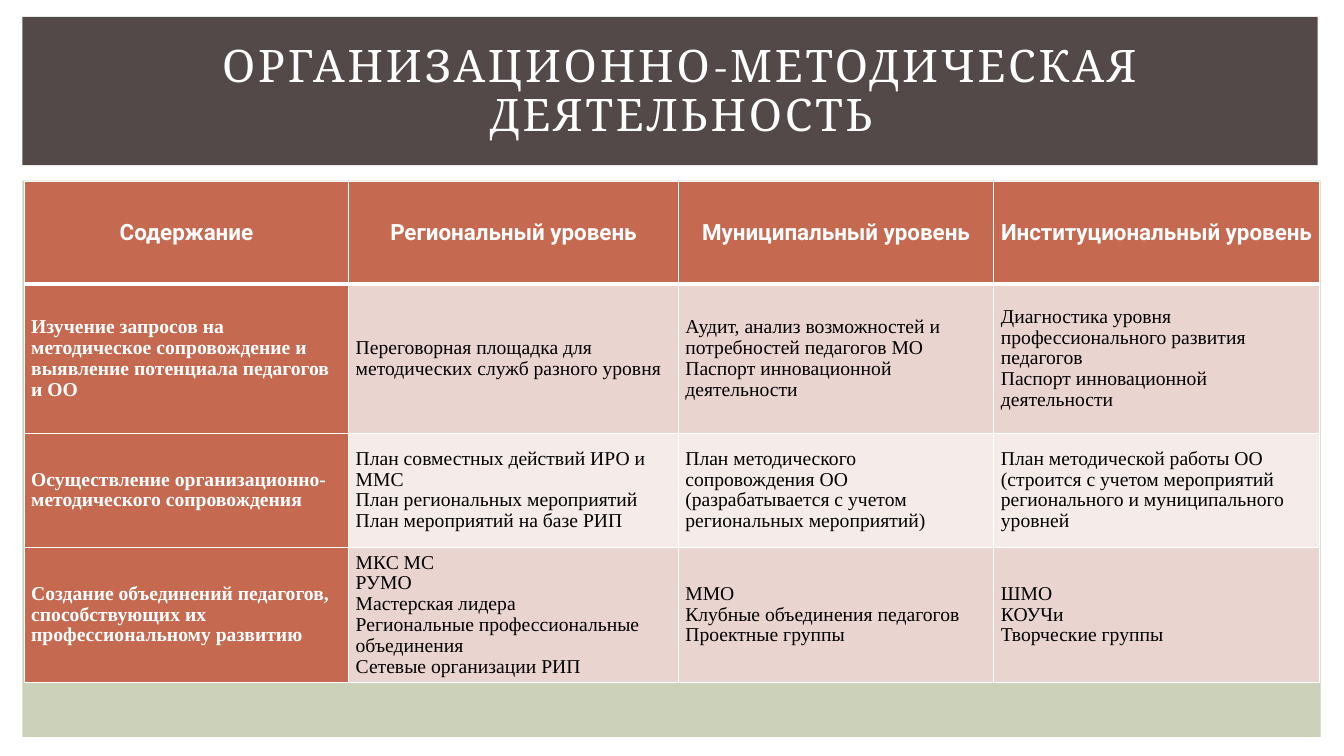
import pptx
import pptx.dml.color
import pptx.enum.shapes
import pptx.enum.text
import pptx.oxml
import pptx.oxml.ns
import pptx.util

Pt = pptx.util.Pt
RGBColor = pptx.dml.color.RGBColor
PP_ALIGN = pptx.enum.text.PP_ALIGN
MIDDLE = pptx.enum.text.MSO_ANCHOR.MIDDLE

WHITE = RGBColor(0xFF, 0xFF, 0xFF)
BLACK = RGBColor(0, 0, 0)
BROWN = RGBColor(0x53, 0x49, 0x49)
SAGE = RGBColor(0xCC, 0xD1, 0xB9)
TERRACOTTA = RGBColor(0xC6, 0x69, 0x51)
BANDS = (RGBColor(0xEA, 0xD4, 0xD0), RGBColor(0xF5, 0xEB, 0xE9))

TITLE = "ОРГАНИЗАЦИОННО-МЕТОДИЧЕСКАЯ ДЕЯТЕЛЬНОСТЬ"
COLUMN_WIDTHS = (231.8, 235.5, 225.4, 232.5)
ROW_HEIGHTS = (73.4, 106.5, 81.3, 80.6)
# Each newline inside a cell starts a new paragraph.
LEVELS = (
    ("Содержание", "Региональный уровень", "Муниципальный уровень",
     "Институциональный уровень"),
    ("Изучение запросов на методическое сопровождение и выявление потенциала педагогов и ОО",
     "Переговорная площадка для методических служб разного уровня",
     "Аудит, анализ возможностей и потребностей педагогов МО\n"
     "Паспорт инновационной деятельности",
     "Диагностика уровня профессионального развития педагогов\n"
     "Паспорт инновационной деятельности"),
    ("Осуществление организационно-методического сопровождения",
     "План совместных действий ИРО и ММС\nПлан региональных мероприятий\n"
     "План мероприятий на базе РИП",
     "План методического сопровождения ОО (разрабатывается с учетом региональных мероприятий)",
     "План методической работы ОО (строится с учетом мероприятий регионального "
     "и муниципального уровней"),
    ("Создание объединений педагогов,\nспособствующих их профессиональному развитию",
     "МКС МС\nРУМО\nМастерская лидера\nРегиональные профессиональные объединения\n"
     "Сетевые организации РИП",
     "ММО\nКлубные объединения педагогов\nПроектные группы",
     "ШМО\nКОУЧи\nТворческие группы"),
)


def add_panel(slide, left, top, width, height, color):
    panel = slide.shapes.add_shape(
        pptx.enum.shapes.MSO_SHAPE.RECTANGLE, Pt(left), Pt(top), Pt(width), Pt(height))
    panel.shadow.inherit = False
    panel.fill.solid()
    panel.fill.fore_color.rgb = color
    panel.line.fill.background()


def write_paragraphs(frame, text, font, size, color, bold, align, spacing):
    for index, line in enumerate(text.split("\n")):
        paragraph = frame.add_paragraph() if index else frame.paragraphs[0]
        paragraph.alignment = align
        paragraph.line_spacing = spacing
        run = paragraph.add_run()
        run.text = line
        run.font.name = font
        run.font.size = Pt(size)
        run.font.color.rgb = color
        run.font.bold = bold


def add_title(slide, left, top, width, height):
    add_panel(slide, left, top, width, height, BROWN)
    heading = slide.shapes.add_textbox(
        Pt(left + 36.8), Pt(top + 16), Pt(width - 57.6), Pt(height - 30))
    frame = heading.text_frame
    frame.word_wrap = True
    frame.vertical_anchor = MIDDLE
    write_paragraphs(frame, TITLE, "Cambria", 32, WHITE, False, PP_ALIGN.CENTER, 0.9)
    frame.paragraphs[0].runs[0].font._element.set("spc", "200")


def set_borders(cell, bottom_width):
    """Draw white cell edges, placed before the fill as the schema requires."""
    properties = cell._tc.get_or_add_tcPr()
    widths = (("lnL", 1), ("lnR", 1), ("lnT", 1), ("lnB", bottom_width))
    for index, (edge, width) in enumerate(widths):
        properties.insert(index, pptx.oxml.parse_xml(
            f'<a:{edge} {pptx.oxml.ns.nsdecls("a")} w="{Pt(width)}"><a:solidFill>'
            f'<a:srgbClr val="{WHITE}"/></a:solidFill></a:{edge}>'))


def add_levels_table(slide, left, top):
    table = slide.shapes.add_table(
        len(LEVELS), len(COLUMN_WIDTHS), Pt(left), Pt(top),
        Pt(sum(COLUMN_WIDTHS)), Pt(sum(ROW_HEIGHTS))).table
    for column, width in zip(table.columns, COLUMN_WIDTHS):
        column.width = Pt(width)
    for row, height in zip(table.rows, ROW_HEIGHTS):
        row.height = Pt(height)

    for r, texts in enumerate(LEVELS):
        for c, text in enumerate(texts):
            cell = table.cell(r, c)
            is_header = r == 0
            is_heading = is_header or c == 0
            cell.vertical_anchor = MIDDLE
            cell.margin_left = cell.margin_right = Pt(4.5 if is_header else 5)
            cell.margin_top = cell.margin_bottom = Pt(0)
            cell.fill.solid()
            cell.fill.fore_color.rgb = TERRACOTTA if is_heading else BANDS[(r - 1) % 2]
            set_borders(cell, 3 if is_header else 1)
            write_paragraphs(
                cell.text_frame, text,
                "Roboto" if is_header else "Times New Roman",
                16 if is_header else 14,
                WHITE if is_heading else BLACK, is_heading,
                PP_ALIGN.CENTER if is_header else PP_ALIGN.LEFT,
                1.0 if is_header else 0.96)


def main():
    presentation = pptx.Presentation()
    presentation.slide_width = Pt(960)
    presentation.slide_height = Pt(540)
    slide = presentation.slides.add_slide(presentation.slide_layouts[6])
    add_panel(slide, 16, 129, 927.4, 397.4, SAGE)
    add_title(slide, 16, 12, 925.2, 106)
    add_levels_table(slide, 17.3, 129.6)
    presentation.save("out.pptx")


if __name__ == "__main__":
    main()
